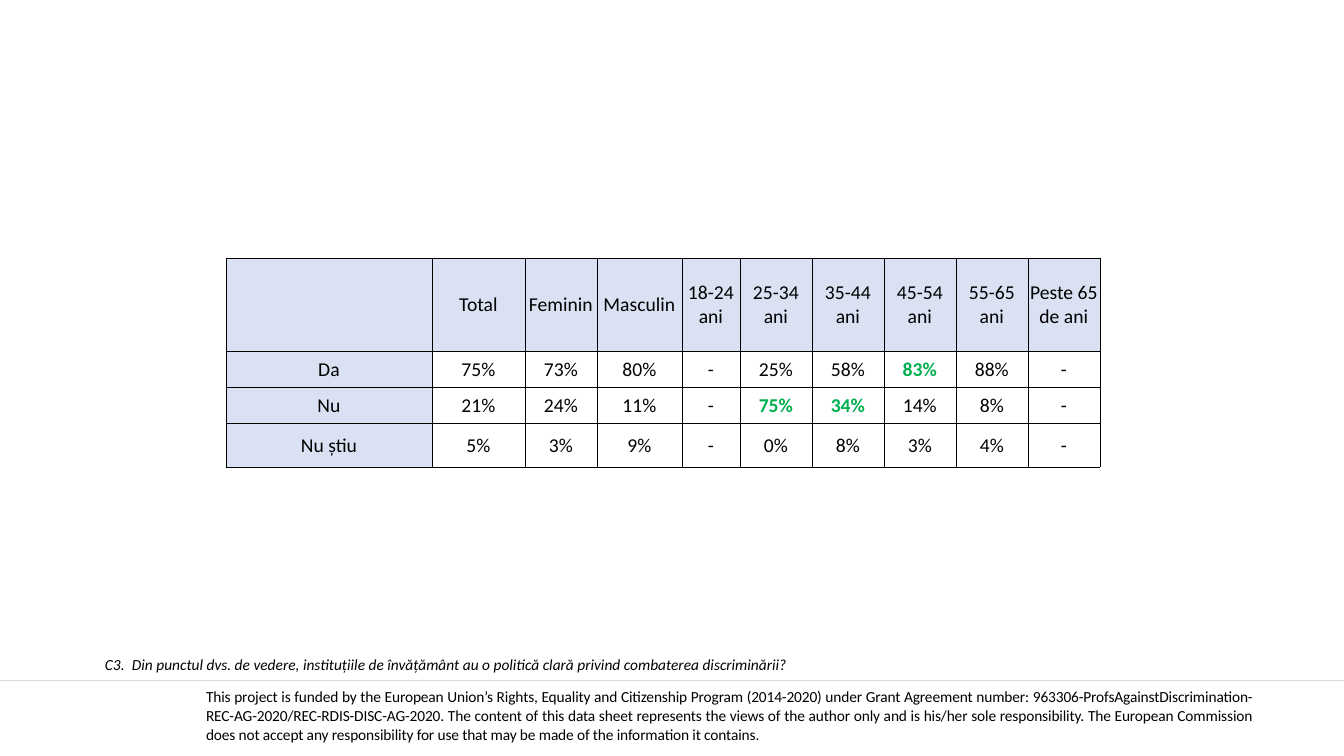
from dataclasses import dataclass

from lxml import etree
from pptx import Presentation
from pptx.dml.color import RGBColor
from pptx.enum.shapes import MSO_CONNECTOR
from pptx.enum.text import MSO_ANCHOR, MSO_AUTO_SIZE, PP_ALIGN
from pptx.oxml.ns import qn
from pptx.slide import Slide
from pptx.table import Table, _Cell
from pptx.text.text import _Paragraph
from pptx.util import Emu, Pt

STRAIGHT = MSO_CONNECTOR.STRAIGHT
MIDDLE = MSO_ANCHOR.MIDDLE
CENTER, JUSTIFY, LEFT = PP_ALIGN.CENTER, PP_ALIGN.JUSTIFY, PP_ALIGN.LEFT
FIT_SHAPE = MSO_AUTO_SIZE.SHAPE_TO_FIT_TEXT

BLACK = RGBColor(0x00, 0x00, 0x00)
INK = RGBColor(0x01, 0x02, 0x05)
GREEN = RGBColor(0x00, 0xB0, 0x50)
PALE_BLUE = RGBColor(0xD9, 0xE1, 0xF2)
GREY = RGBColor(0xD9, 0xD9, 0xD9)

FONT = "Calibri"
PLAIN_TABLE_STYLE = "{2D5ABB26-0587-4C30-8999-92F81FD0307C}"
EMU_PER_PX = 12192000 / 1344
SLIDE_WIDTH, SLIDE_HEIGHT = 1344, 756
RULE_Y = 680


@dataclass(frozen=True)
class AnswerRow:
    """One row of the survey table, with the columns that stand out."""

    height: int
    texts: tuple[str, ...]
    highlights: tuple[int, ...] = ()


COLUMN_WIDTHS = [206, 93, 72, 85, 58] + [72] * 5
HEADINGS = ("", "Total", "Feminin", "Masculin", "18-24 ani", "25-34 ani",
            "35-44 ani", "45-54 ani", "55-65 ani", "Peste 65 de ani")
ROWS = [
    AnswerRow(93, HEADINGS),
    AnswerRow(36, ("Da", "75%", "73%", "80%", "-", "25%", "58%", "83%", "88%", "-"), (7,)),
    AnswerRow(36, ("Nu", "21%", "24%", "11%", "-", "75%", "34%", "14%", "8%", "-"), (5, 6)),
    AnswerRow(44, ("Nu știu", "5%", "3%", "9%", "-", "0%", "8%", "3%", "4%", "-")),
]
QUESTION = ("C3.\tDin punctul dvs. de vedere, instituțiile de învățământ au o "
            "politică clară privind combaterea discriminării?")
FUNDING = (
    "This project is funded by the European Union’s Rights, Equality and Citizenship "
    "Program (2014-2020) under Grant Agreement number: "
    "963306-ProfsAgainstDiscrimination-REC-AG-2020/REC-RDIS-DISC-AG-2020. "
    "The content of this data sheet represents the views of the author only and is "
    "his/her sole responsibility. The European Commission does not accept any "
    "responsibility for use that may be made of the information it contains."
)


def px(length: int) -> Emu:
    """Turn whole pixels into EMU."""
    return Emu(round(length * EMU_PER_PX))


def write(para: _Paragraph, text: str, size: int, align: PP_ALIGN,
          color: RGBColor = BLACK, bold: bool = False, italic: bool = False) -> None:
    """Fill a paragraph with text in one style."""
    para.add_run().text = text
    para.alignment = align
    font = para.font
    font.name, font.size, font.bold, font.italic = FONT, Pt(size), bold, italic
    font.color.rgb = color


def add_plain_table(page: Slide, left: int, top: int, widths: list[int],
                    heights: list[int]) -> Table:
    """Add an unstyled table with the given column widths and row heights."""
    table = page.shapes.add_table(len(heights), len(widths), px(left), px(top),
                                  px(sum(widths)), px(sum(heights))).table
    table.first_row = table.horz_banding = False
    table._tbl.tblPr.find(qn("a:tableStyleId")).text = PLAIN_TABLE_STYLE
    for column, width in zip(table.columns, widths):
        column.width = px(width)
    for row, height in zip(table.rows, heights):
        row.height = px(height)
    return table


def set_margins(cell: _Cell, margin: int, bottom: int) -> None:
    """Centre a cell vertically and set its insets."""
    cell.vertical_anchor = MIDDLE
    cell.margin_left = cell.margin_right = cell.margin_top = px(margin)
    cell.margin_bottom = px(bottom)


def add_borders(cell: _Cell) -> None:
    """Draw a thin black line on all four sides of a cell."""
    properties = cell._tc.get_or_add_tcPr()
    for side in ("a:lnL", "a:lnR", "a:lnT", "a:lnB"):
        line = etree.SubElement(properties, qn(side), w=str(Pt(0.5)))
        fill = etree.SubElement(line, qn("a:solidFill"))
        etree.SubElement(fill, qn("a:srgbClr"), val=str(BLACK))


def add_answers(page: Slide) -> None:
    """Add the table of answers by gender and age."""
    table = add_plain_table(page, 226, 258, COLUMN_WIDTHS, [row.height for row in ROWS])
    for row_index, row in enumerate(ROWS):
        for column_index, text in enumerate(row.texts):
            cell = table.cell(row_index, column_index)
            is_label = row_index == 0 or column_index == 0
            is_highlight = column_index in row.highlights
            set_margins(cell, 1, 0)
            add_borders(cell)
            if is_label:
                cell.fill.solid()
                cell.fill.fore_color.rgb = PALE_BLUE
            if text:
                color = BLACK if is_label else GREEN if is_highlight else INK
                write(cell.text_frame.paragraphs[0], text, 14, CENTER, color, is_highlight)


def add_funding_note(page: Slide) -> None:
    """Add the funding statement at the foot of the slide."""
    cell = add_plain_table(page, 206, 664, [1047], [105]).cell(0, 0)
    set_margins(cell, 0, 0)
    para = cell.text_frame.paragraphs[0]
    write(para, FUNDING, 11, JUSTIFY)
    para.runs[0]._r.get_or_add_rPr().set("spc", "-10")


def add_rule(page: Slide) -> None:
    """Add the grey line above the funding statement."""
    rule = page.shapes.add_connector(STRAIGHT, 0, px(RULE_Y), px(SLIDE_WIDTH), px(RULE_Y))
    rule.line.color.rgb = GREY
    rule.line.width = Pt(0.5)
    etree.SubElement(rule._element.spPr, qn("a:effectLst"))


def add_question(page: Slide) -> None:
    """Add the survey question in italics."""
    box = page.shapes.add_textbox(px(95), px(650), px(807), px(29))
    box.text_frame.word_wrap = True
    box.text_frame.auto_size = FIT_SHAPE
    para = box.text_frame.paragraphs[0]
    tabs = etree.SubElement(para._p.get_or_add_pPr(), qn("a:tabLst"))
    etree.SubElement(tabs, qn("a:tab"), pos=str(px(27)), algn="l")
    write(para, QUESTION, 11, LEFT, italic=True)


def main() -> None:
    """Build the slide and save it."""
    deck = Presentation()
    deck.slide_width, deck.slide_height = px(SLIDE_WIDTH), px(SLIDE_HEIGHT)
    page = deck.slides.add_slide(deck.slide_layouts[6])
    add_funding_note(page)
    add_answers(page)
    add_rule(page)
    add_question(page)
    deck.save("out.pptx")


if __name__ == "__main__":
    main()
